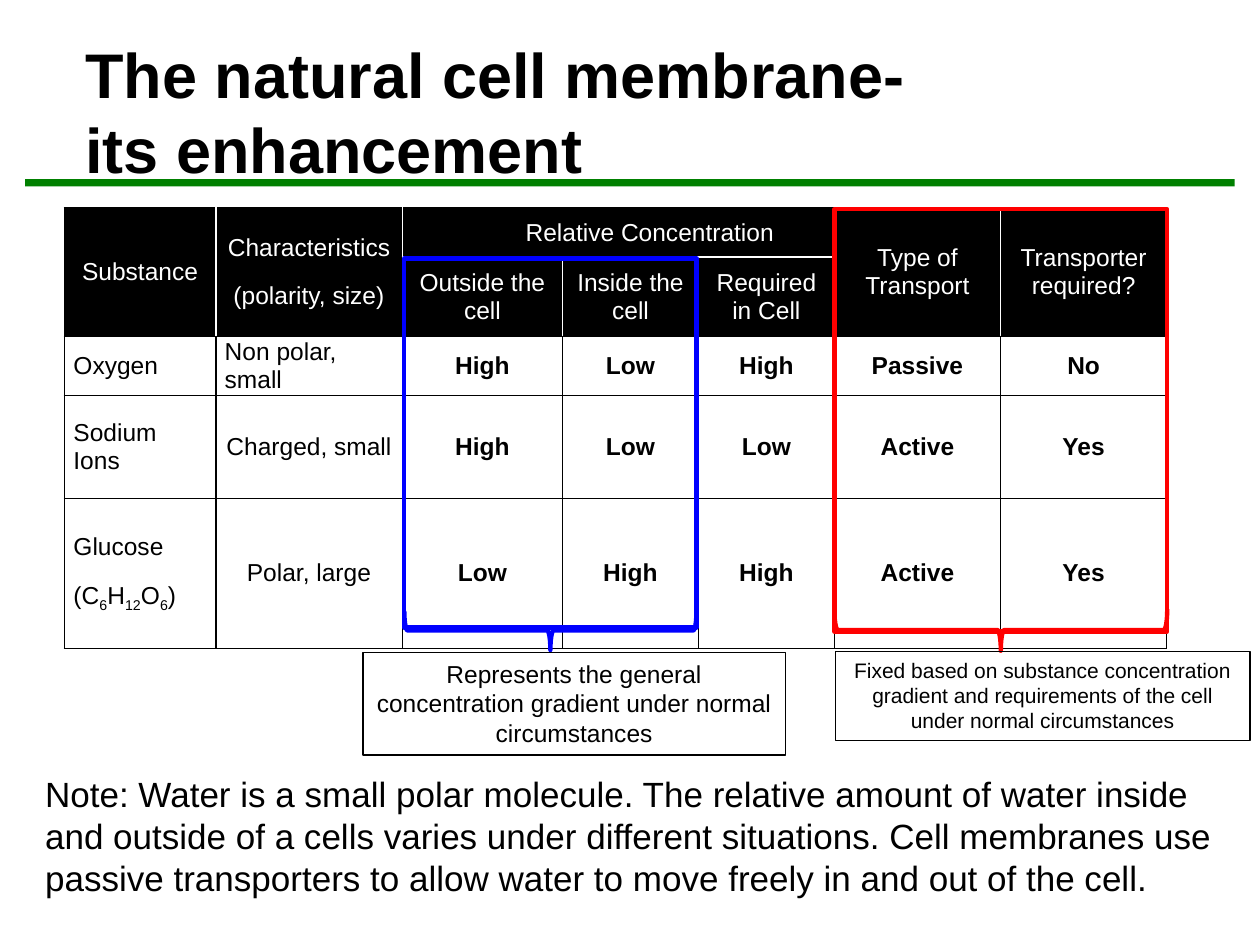
"""Builds the slide on substances crossing the natural cell membrane."""
from itertools import groupby

from lxml import etree
from pptx import Presentation, util as u
from pptx.dml.color import RGBColor
from pptx.enum import shapes, text
from pptx.oxml.ns import qn

BLACK, WHITE, GREEN, RED, BLUE = "000000", "FFFFFF", "008000", "FF0000", "0000FF"
CENTER, LEFT = text.PP_ALIGN.CENTER, text.PP_ALIGN.LEFT

TITLE = "The natural cell membrane-\vits enhancement"
NOTE = ("Note: Water is a small polar molecule. The relative amount of water inside and outside "
        "of a cells varies under different situations. Cell membranes use passive transporters "
        "to allow water to move freely in and out of the cell.")
ROWS = [
    ["Substance", "Characteristics\n(polarity, size)", "Relative Concentration", "", "",
     "Type of Transport", "Transporter required?"],
    ["", "", "Outside the cell", "Inside the cell", "Required in Cell", "", ""],
    ["Oxygen", "Non polar, small", "High", "Low", "High", "Passive", "No"],
    ["Sodium Ions", "Charged, small", "High", "Low", "Low", "Active", "Yes"],
    ["Glucose\n(C6H12O6)", "Polar, large", "Low", "High", "High", "Active", "Yes"],
]
COL_WIDTHS = [3.05, 3.76, 3.23, 2.74, 2.74, 3.35, 3.35]
ROW_HEIGHTS = [0.99, 1.6, 1.19, 2.08, 3.02]
MERGES = [(0, 0, 1, 0), (0, 1, 1, 1), (0, 2, 0, 4), (0, 5, 1, 5), (0, 6, 1, 6)]
LEFT_CELLS = {(2, 0), (3, 0), (4, 0), (2, 1)}
HEADER_ROWS = 2
GROUPS = [
    dict(color=RED, frame=(16.82, 4.22, 6.71, 8.51), brace_y=12.7, depth=0.84,
         box=(16.84, 13.13, 8.36, 1.8), size=12,
         label="Fixed based on substance concentration gradient and requirements "
               "of the cell under normal circumstances"),
    dict(color=BLUE, frame=(8.15, 5.21, 5.89, 7.44), brace_y=12.71, depth=0.79,
         box=(7.32, 13.16, 8.51, 2.06), size=14,
         label="Represents the general concentration gradient under normal circumstances"),
]


def rgb(value):
    return RGBColor.from_string(value)


def cm(values):
    return [u.Cm(v) for v in values]


def style(target, **values):
    for name, value in values.items():
        setattr(target, name, value)


def style_font(font, size, color=BLACK, bold=False):
    style(font, name="Arial", size=u.Pt(size), bold=bold)
    font.color.rgb = rgb(color)


def add_shape(s, kind, at, fill=None, line=None, width=0.75):
    sp = s.shapes.add_shape(kind, *cm(at))
    sp.shadow.inherit = False
    if fill:
        sp.fill.solid()
        sp.fill.fore_color.rgb = rgb(fill)
    else:
        sp.fill.background()
    if line:
        sp.line.color.rgb = rgb(line)
        sp.line.width = u.Pt(width)
    else:
        sp.line.fill.background()
    return sp


def write(sp, content, size, align=LEFT):
    tf = sp.text_frame
    style(tf, word_wrap=True, auto_size=text.MSO_AUTO_SIZE.SHAPE_TO_FIT_TEXT,
          vertical_anchor=text.MSO_ANCHOR.TOP)
    p = tf.paragraphs[0]
    p.alignment = align
    r = p.add_run()
    r.text = content
    style_font(r.font, size)


def set_borders(cell, colors):
    tc_pr = cell._tc.get_or_add_tcPr()
    for i, (side, color) in enumerate(colors.items()):
        ln = etree.Element(qn(f"a:ln{side}"), w=str(u.Pt(1)))
        fill = etree.SubElement(ln, qn("a:solidFill"))
        etree.SubElement(fill, qn("a:srgbClr"), val=color)
        tc_pr.insert(i, ln)


def fill_cell(cell, row, col, content):
    header = row < HEADER_ROWS
    style(cell, margin_left=u.Cm(0.18), margin_right=u.Cm(0.18), margin_top=0,
          margin_bottom=0, vertical_anchor=text.MSO_ANCHOR.MIDDLE)
    if header:
        cell.fill.solid()
        cell.fill.fore_color.rgb = rgb(BLACK)
    else:
        cell.fill.background()
    if cell.is_spanned:
        return
    split = 2 <= col <= 4
    white = {"L": header and col > 0, "R": header and col < len(COL_WIDTHS) - 1,
             "T": row == 1, "B": row == 0 and split}
    set_borders(cell, {side: WHITE if on else BLACK for side, on in white.items()})
    for i, line in enumerate(content.split("\n")):
        tf = cell.text_frame
        p = tf.add_paragraph() if i else tf.paragraphs[0]
        style(p, alignment=LEFT if (row, col) in LEFT_CELLS else CENTER,
              space_before=u.Pt(6 if i else 0), space_after=u.Pt(6))
        if header and split:
            p.line_spacing = u.Pt(16)
        if cell.is_merge_origin and cell.span_width > 1:
            p._p.get_or_add_pPr().set("marL", str(u.Cm(1.27)))
        for is_digit, chars in groupby(line, str.isdigit):
            r = p.add_run()
            r.text = "".join(chars)
            style_font(r.font, 14, WHITE if header else BLACK, not header and col >= 2)
            if is_digit:
                r._r.get_or_add_rPr().set("baseline", "-25000")


def add_substance_table(s):
    at = cm((1.3, 4.19, sum(COL_WIDTHS), sum(ROW_HEIGHTS)))
    table = s.shapes.add_table(len(ROWS), len(COL_WIDTHS), *at).table
    style(table, first_row=False, horz_banding=False)
    for col, width in zip(table.columns, COL_WIDTHS):
        col.width = u.Cm(width)
    for row, height in zip(table.rows, ROW_HEIGHTS):
        row.height = u.Cm(height)
    for top, left, bottom, right in MERGES:
        table.cell(top, left).merge(table.cell(bottom, right))
    for i, row in enumerate(ROWS):
        for j, content in enumerate(row):
            fill_cell(table.cell(i, j), i, j, content)


def add_group(s, group):
    x, _, width, _ = group["frame"]
    depth = group["depth"]
    add_shape(s, shapes.MSO_SHAPE.RECTANGLE, group["frame"], line=group["color"], width=2.5)
    at = (x + (width - depth) / 2, group["brace_y"] - width / 2, depth, width)
    brace = add_shape(s, shapes.MSO_SHAPE.RIGHT_BRACE, at, line=group["color"], width=2.5)
    brace.rotation = 90
    box = add_shape(s, shapes.MSO_SHAPE.RECTANGLE, group["box"], line=BLACK)
    write(box, group["label"], group["size"], CENTER)


def main():
    prs = Presentation()
    prs.slide_width, prs.slide_height = cm((25.4, 19.05))
    s = prs.slides.add_slide(prs.slide_layouts[5])
    add_shape(s, shapes.MSO_SHAPE.RECTANGLE, (0.51, 3.61, 24.38, 0.15), fill=GREEN)
    title = s.shapes.title
    style(title, **dict(zip(("left", "top", "width", "height"), cm((1.47, 0.64, 22.86, 3.18)))))
    tf = title.text_frame
    tf.text = TITLE
    style(tf, auto_size=text.MSO_AUTO_SIZE.NONE, vertical_anchor=text.MSO_ANCHOR.MIDDLE)
    tf.paragraphs[0].alignment = LEFT
    for r in tf.paragraphs[0].runs:
        style_font(r.font, 36, bold=True)
    add_substance_table(s)
    for group in GROUPS:
        add_group(s, group)
    write(s.shapes.add_textbox(*cm((0.66, 15.44, 24.1, 2.82))), NOTE, 20)
    prs.save("out.pptx")


if __name__ == "__main__":
    main()
